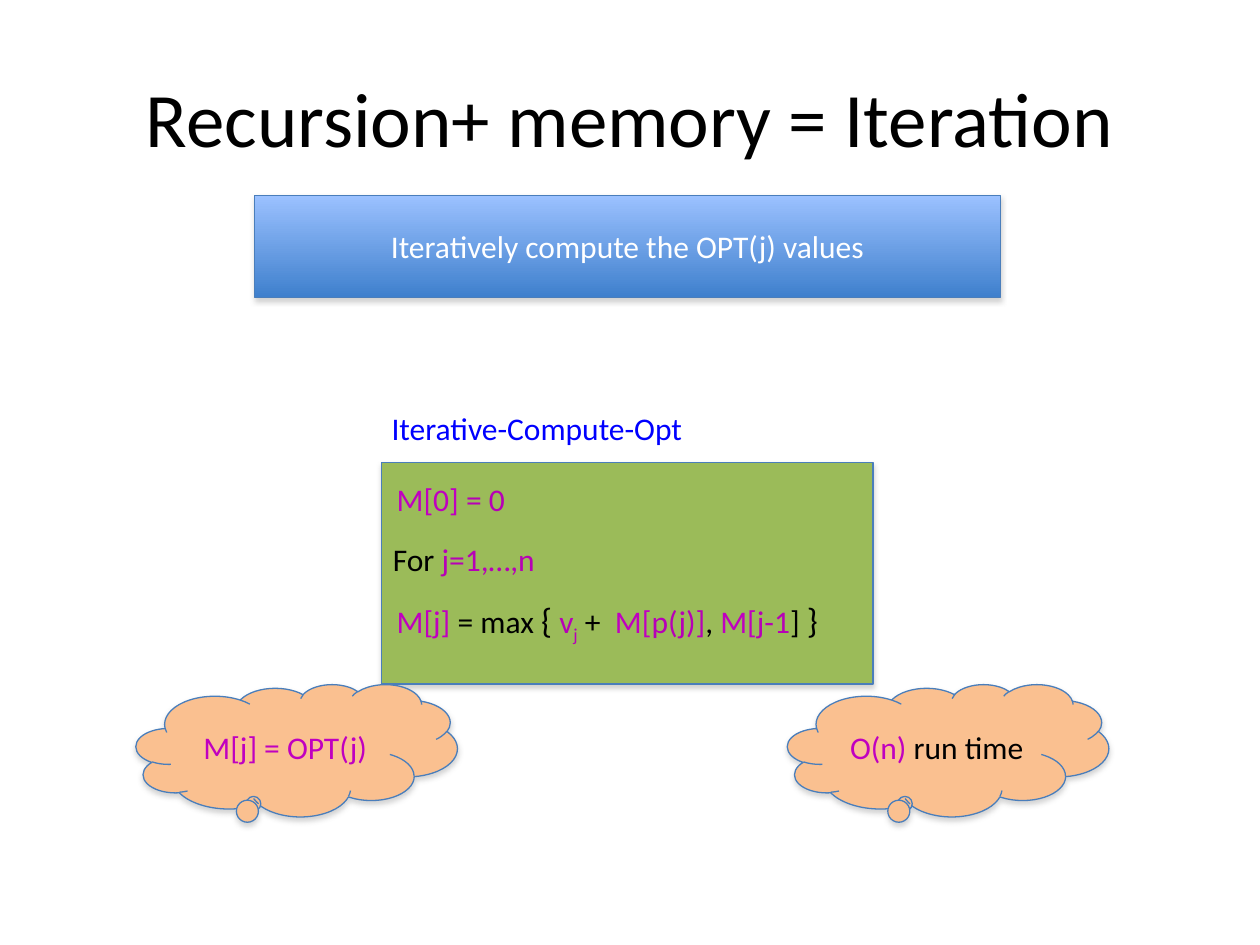
from pptx import Presentation
from pptx.dml.color import RGBColor
from pptx.enum.shapes import MSO_SHAPE
from pptx.enum.text import MSO_ANCHOR, MSO_AUTO_SIZE, PP_ALIGN
from pptx.oxml import parse_xml
from pptx.oxml.ns import qn
from pptx.util import Inches, Pt

THEME = {
    "font": "Calibri", "title": 44, "body": 18, "brace": 20, "rule": 0.75,
    "black": "000000", "white": "FFFFFF", "blue": "0000FF",
    "pink": "C000C0", "plum": "B700B7", "green": "9BBB59",
    "peach": "FAC090", "edge": "4A7EBB", "shade": "808080",
    "fade": ("9BC1FF", "3F80CD"),
}

TITLE = [("Recursion+ memory = Iteration", "black", "title")]
BANNER = [("Iteratively compute the OPT(j) values", "white")]
NAME = [("Iterative-Compute-Opt", "blue")]
CODE = [
    ((3.05, 3.76, 1.07, 0.4), [("M[0] ", "pink"), ("= 0", "plum")]),
    ((3.05, 4.7, 3.64, 0.44), [
        ("M[j] ", "pink"), ("= max ", "black"), ("{", "black", "brace"),
        (" ", "black"), ("v", "plum"), ("j", "plum", "body", -25),
        (" +  ", "black"), ("M[", "pink"), ("p(j)]", "plum"),
        (", ", "black"), ("M[", "pink"), ("j-1", "plum"),
        ("] ", "black"), ("}", "black", "brace"),
    ]),
    ((3.02, 4.24, 1.34, 0.4), [("For ", "black"), ("j=1,…,n", "plum")]),
]
CLOUDS = [
    (1.08, [("M[j] = OPT(j)", "pink")]),
    (6.25, [("O(n) ", "pink"), ("run time", "black")]),
]

SHADOW = (
    '<a:outerShdw xmlns:a="http://schemas.openxmlformats.org/drawingml/2006/main"'
    f' blurRad="{Pt(3.1)}" dist="{Pt(1.8)}" dir="5400000" rotWithShape="0">'
    f'<a:srgbClr val="{THEME["shade"]}"><a:alpha val="35000"/></a:srgbClr>'
    '</a:outerShdw>'
)


def tint(key):
    return RGBColor.from_string(THEME[key])


def write(shape, runs, align=PP_ALIGN.CENTER, anchor=MSO_ANCHOR.MIDDLE, wrap=True):
    frame = shape.text_frame
    frame.word_wrap = wrap
    frame.vertical_anchor = anchor
    para = frame.paragraphs[0]
    para.alignment = align
    for text, color, size, base in ((*run, "body", 0)[:4] if len(run) == 2
                                    else (*run, 0)[:4] for run in runs):
        run = para.add_run()
        run.text = text
        font = run.font
        font.name = THEME["font"]
        font.size = Pt(THEME[size])
        font.color.rgb = tint(color)
        if base:
            run.font._element.set("baseline", str(base * 1000))


def label(shapes, box, runs):
    shape = shapes.add_textbox(*map(Inches, box))
    write(shape, runs, PP_ALIGN.LEFT, MSO_ANCHOR.TOP, False)
    shape.text_frame.auto_size = MSO_AUTO_SIZE.SHAPE_TO_FIT_TEXT


def block(shapes, kind, box, fill):
    shape = shapes.add_shape(kind, *map(Inches, box))
    if fill == "fade":
        shape.fill.gradient()
        shape.fill.gradient_angle = 270
        for spot, (stop, color) in enumerate(zip(shape.fill.gradient_stops, THEME[fill])):
            stop.position = spot
            stop.color.rgb = RGBColor.from_string(color)
    else:
        shape.fill.solid()
        shape.fill.fore_color.rgb = tint(fill)
    shape.line.color.rgb = tint("edge")
    shape.line.width = Pt(THEME["rule"])
    shape.shadow.inherit = False
    shape.element.spPr.find(qn("a:effectLst")).append(parse_xml(SHADOW))
    return shape


def main():
    deck = Presentation()
    deck.slide_width, deck.slide_height = Inches(10), Inches(7.5)
    shapes = deck.slides.add_slide(deck.slide_layouts[6]).shapes

    write(shapes.add_textbox(*map(Inches, (0.5, 0.3, 9, 1.25))), TITLE)
    write(block(shapes, MSO_SHAPE.RECTANGLE, (2.02, 1.55, 5.92, 0.81), "fade"), BANNER)

    group = shapes.add_group_shape().shapes
    block(group, MSO_SHAPE.RECTANGLE, (3.03, 3.67, 3.9, 1.76), "green")
    for box, runs in CODE:
        label(group, box, runs)
    label(shapes, (3.01, 3.2, 2.53, 0.4), NAME)

    for left, runs in CLOUDS:
        cloud = block(shapes, MSO_SHAPE.CLOUD_CALLOUT, (left, 5.43, 2.55, 1.05), "peach")
        cloud.adjustments[0], cloud.adjustments[1] = -0.13, 0.39
        write(cloud, runs)

    deck.save("out.pptx")


if __name__ == "__main__":
    main()
